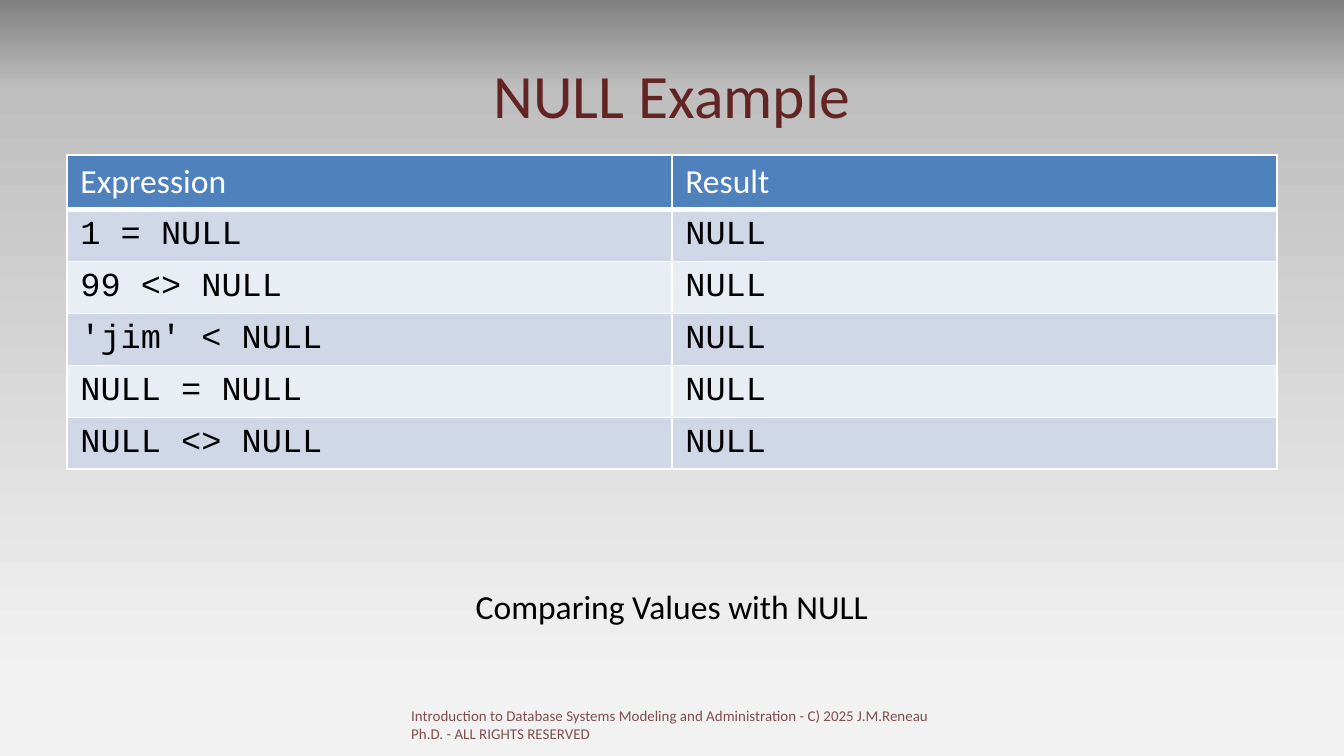
from copy import deepcopy

from lxml.etree import SubElement
from pptx import Presentation
from pptx.dml.color import RGBColor
from pptx.enum.text import MSO_ANCHOR as Anchor, PP_ALIGN as Align
from pptx.oxml.ns import qn
from pptx.util import Pt

PX = 914400 / 134.4


def px(*lengths):
    return [round(length * PX) for length in lengths]


def style(paragraph, size, color, face="Calibri"):
    font = paragraph.font
    font.size, font.name = Pt(size), face
    font.color.rgb = RGBColor.from_string(color)


prs = Presentation()
prs.slide_width, prs.slide_height = px(1344, 756)
slide = prs.slides.add_slide(prs.slide_layouts[5])

backdrop = slide.background.fill
backdrop.gradient()
backdrop.gradient_angle = 270
last_stop = slide.element.findall(".//" + qn("a:gs"))[-1]
last_stop.addnext(deepcopy(last_stop))
stops = [(0, "808080"), (0.12, "BFBFBF"), (0.9, "F2F2F2")]
for stop, (position, color) in zip(backdrop.gradient_stops, stops):
    stop.position = position
    stop.color.rgb = RGBColor.from_string(color)

title = slide.shapes.title
title.left, title.top, title.width, title.height = px(67, 31, 1210, 126)
title.text_frame.text = "NULL Example"
title.text_frame.vertical_anchor = Anchor.MIDDLE
heading = title.text_frame.paragraphs[0]
heading.alignment = Align.CENTER
style(heading, 33, "632523")

expressions = ["1 = NULL", "99 <> NULL", "'jim' < NULL", "NULL = NULL", "NULL <> NULL"]
rows = [("Expression", "Result")] + [(expression, "NULL") for expression in expressions]
results = slide.shapes.add_table(len(rows), 2, *px(67, 155, 1210, 314)).table
for column in results.columns:
    column.width = px(605)[0]
for r, row in enumerate(rows):
    header = r == 0
    results.rows[r].height = px(54 if header else 52)[0]
    for c, content in enumerate(row):
        cell = results.cell(r, c)
        cell.text = content
        if header:
            fill, color, face = "4F81BD", "FFFFFF", "Calibri"
        else:
            fill, color, face = "D0D8E8" if r % 2 else "E9EDF4", "000000", "Courier New"
        style(cell.text_frame.paragraphs[0], 18, color, face)
        properties = cell._tc.get_or_add_tcPr()
        for side in "LRTB":
            width = 3 if header and side == "B" else 1
            border = SubElement(properties, qn(f"a:ln{side}"), w=str(Pt(width)))
            line_fill = SubElement(border, qn("a:solidFill"))
            SubElement(line_fill, qn("a:srgbClr"), val="FFFFFF")
        cell.fill.solid()
        cell.fill.fore_color.rgb = RGBColor.from_string(fill)

captions = [
    ("Comparing Values with NULL", (67, 579, 1210, 75), 18, "000000", Align.CENTER),
    ("Introduction to Database Systems Modeling and Administration - C) 2025 "
     "J.M.Reneau Ph.D. - ALL RIGHTS RESERVED", (398, 700, 546, 40), 8, "632523", Align.LEFT),
]
for wording, bounds, size, color, alignment in captions:
    frame = slide.shapes.add_textbox(*px(*bounds)).text_frame
    frame.word_wrap = True
    frame.text = wording
    caption = frame.paragraphs[0]
    caption.alignment = alignment
    style(caption, size, color)

footer_color = caption._p.find(".//" + qn("a:srgbClr"))
SubElement(footer_color, qn("a:alpha"), val="80000")

prs.save("out.pptx")
